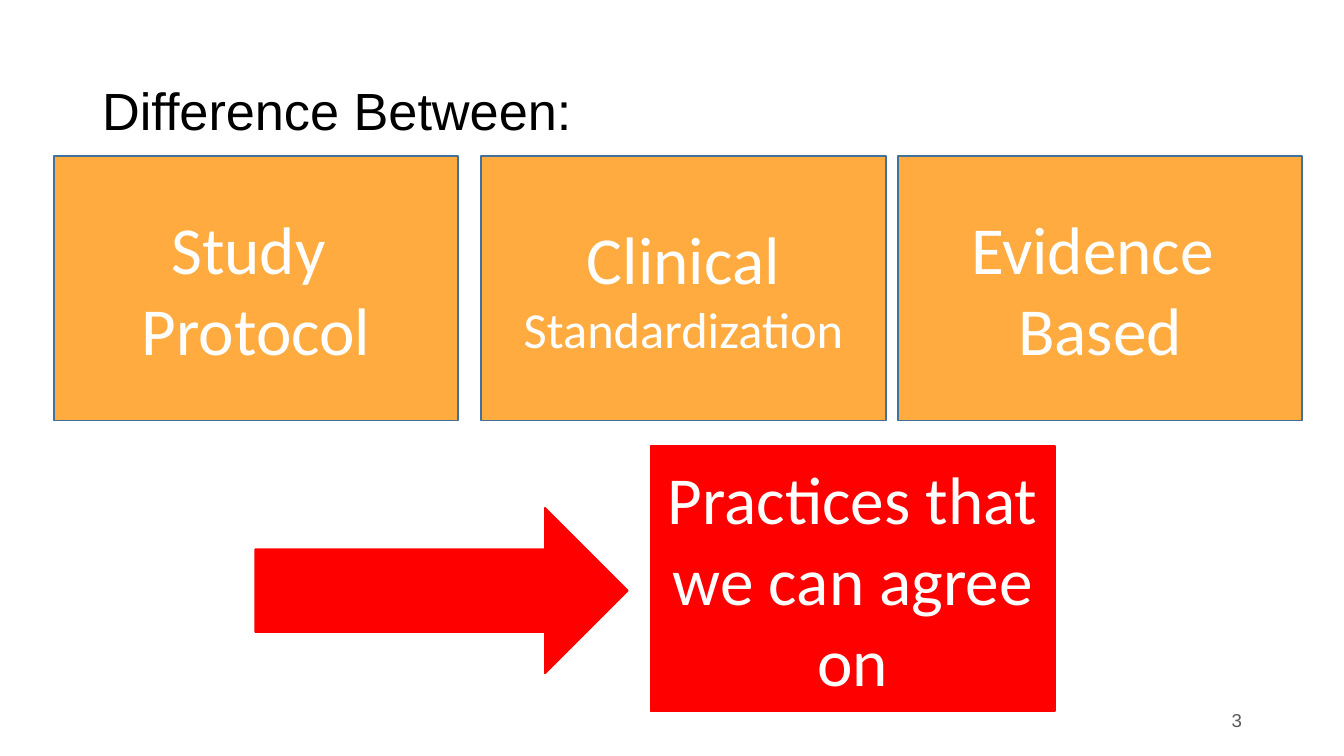
"""Build the slide that sets study protocol, clinical standardization and evidence side by side."""
from pptx import Presentation
from pptx.dml.color import RGBColor
from pptx.enum.shapes import MSO_SHAPE
from pptx.enum.text import MSO_ANCHOR, PP_ALIGN
from pptx.util import Inches, Pt

COLORS = {
    "orange": "FFAB40",
    "blue": "42719B",
    "red": "FF0000",
    "white": "FFFFFF",
    "black": "000000",
    "gray": "595959",
}
FRAME_FORMAT = {
    "word_wrap": True,
    "vertical_anchor": MSO_ANCHOR.MIDDLE,
    "margin_left": Inches(0.07),
    "margin_right": Inches(0.07),
    "margin_top": Inches(0.04),
    "margin_bottom": Inches(0.04),
}


def write_text(shape, lines, font_name, color, alignment, line_spacing=1.0):
    frame = shape.text_frame
    for name, value in FRAME_FORMAT.items():
        setattr(frame, name, value)
    for index, (text, size) in enumerate(lines):
        paragraph = frame.add_paragraph() if index else frame.paragraphs[0]
        paragraph.alignment = alignment
        paragraph.line_spacing = line_spacing
        run = paragraph.add_run()
        run.text = text
        for name, value in {"name": font_name, "size": Pt(size)}.items():
            setattr(run.font, name, value)
        run.font.color.rgb = RGBColor.from_string(COLORS[color])


def add_filled_shape(slide, kind, box, fill, line):
    shape = slide.shapes.add_shape(kind, *map(Inches, box))
    shape.shadow.inherit = False
    shape.fill.solid()
    shape.fill.fore_color.rgb = RGBColor.from_string(COLORS[fill])
    shape.line.color.rgb = RGBColor.from_string(COLORS[line])
    shape.line.width = Pt(1)
    return shape


presentation = Presentation()
presentation.slide_width = Inches(10)
presentation.slide_height = Inches(10 * 9 / 16)
slide = presentation.slides.add_slide(presentation.slide_layouts[6])

title = slide.shapes.add_textbox(Inches(0.69), Inches(0.3), Inches(8.62), Inches(1.09))
write_text(title, [("Difference Between:", 28)], "Arial", "black", PP_ALIGN.LEFT, 0.9)

page_number = slide.shapes.add_textbox(Inches(7.06), Inches(5.21), Inches(2.25), Inches(0.3))
write_text(page_number, [("3", 10)], "Arial", "gray", PP_ALIGN.RIGHT)

box_width, box_height = 3.01, 1.97
boxes = [
    (0.4, 1.16, "orange", "blue", [("Study ", 36), ("Protocol", 36)]),
    (3.58, 1.16, "orange", "blue", [("Clinical", 36), ("Standardization", 27)]),
    (6.68, 1.16, "orange", "blue", [("Evidence ", 36), ("Based", 36)]),
    (4.84, 3.32, "red", "red", [("Practices that we can agree on", 36)]),
]
for left, top, fill, line, lines in boxes:
    box = add_filled_shape(
        slide, MSO_SHAPE.RECTANGLE, (left, top, box_width, box_height), fill, line
    )
    write_text(box, lines, "Calibri", "white", PP_ALIGN.CENTER)

add_filled_shape(slide, MSO_SHAPE.RIGHT_ARROW, (1.9, 3.78, 2.77, 1.23), "red", "red")

presentation.save("out.pptx")
